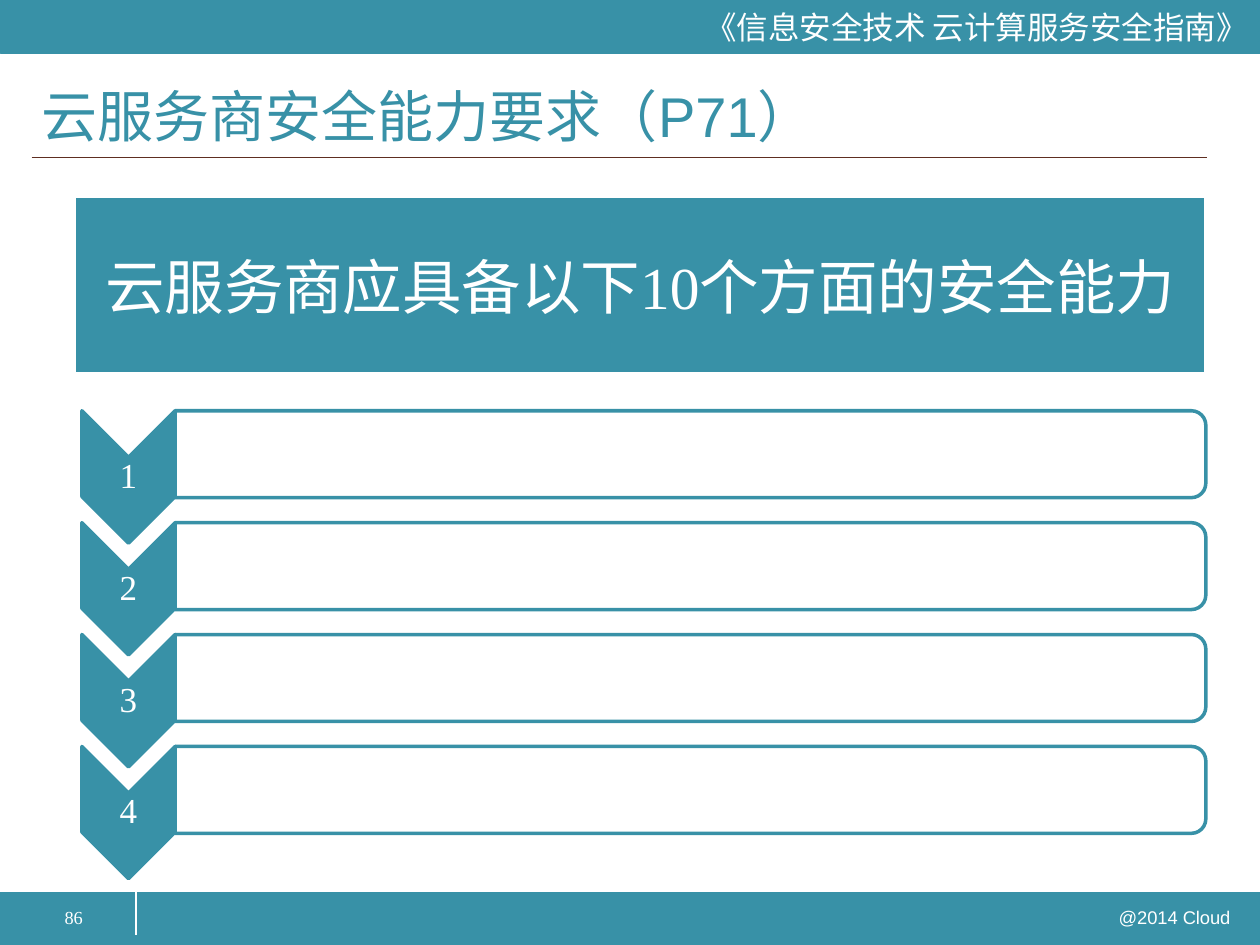
"""Build the slide on the security capabilities required of cloud providers."""
from lxml.etree import SubElement
from pptx import Presentation
from pptx.dml.color import RGBColor
from pptx.enum.shapes import MSO_CONNECTOR as Connector, MSO_SHAPE as Shape
from pptx.enum.text import MSO_ANCHOR as Anchor, PP_ALIGN as Align
from pptx.oxml.ns import qn
from pptx.util import Inches, Pt

HEADER = "《信息安全技术 云计算服务安全指南》"
TITLE = "云服务商安全能力要求（P71）"
BANNER = "云服务商应具备以下10个方面的安全能力"
STEPS = ["1", "2", "3", "4"]
PAGE = "86"
CREDIT = "@2014 Cloud"

COLORS = {"teal": "3891A7", "white": "FFFFFF", "rule": "5E2E21"}
SANS, SERIF = "Arial", "Times New Roman"
WIDTH, HEIGHT = 10, 7.5
BAND = 0.42
FOOTER_TOP = HEIGHT - BAND
STEP_LEFT, STEP_TOP, STEP_PITCH = 0.65, 3.26, 0.888
ARROW_W, ARROW_H = 0.74, 1.05
BAR_W, BAR_H = 8.18, 0.69
NUMBER_H = 0.32


def rgb(name):
    return RGBColor.from_string(COLORS[name])


def block(parent, kind, box, fill, line, weight, turned=False):
    left, top, width, height = box
    if turned:
        left, top = left + (width - height) / 2, top + (height - width) / 2
        width, height = height, width
    shape = parent.add_shape(kind, *map(Inches, (left, top, width, height)))
    shape.rotation = 90 if turned else 0
    shape.shadow.inherit = False
    shape.fill.solid()
    shape.fill.fore_color.rgb = rgb(fill)
    shape.line.color.rgb = rgb(line)
    shape.line.width = Pt(weight)
    return shape


def write(shape, text, size, font, color="white", align=Align.LEFT,
          anchor=Anchor.TOP, wrap=True, spacing=None, inset=None):
    frame = shape.text_frame
    frame.word_wrap = wrap
    frame.vertical_anchor = anchor
    if inset is not None:
        frame.margin_left = frame.margin_right = Inches(inset)
        frame.margin_top = frame.margin_bottom = Inches(inset)
    paragraph = frame.paragraphs[0]
    paragraph.alignment = align
    paragraph.line_spacing = spacing
    run = paragraph.add_run()
    run.text = text
    run.font.size = Pt(size)
    run.font.name = font
    run.font.color.rgb = rgb(color)


def label(parent, box, *args, **options):
    write(parent.add_textbox(*map(Inches, box)), *args, **options)


def rule(parent, start, end, color):
    line = parent.add_connector(Connector.STRAIGHT, *map(Inches, start + end))
    line.line.color.rgb = rgb(color)
    line.line.width = Pt(0.75)
    SubElement(line._element.spPr, qn("a:effectLst"))


def add_step(parent, number, top):
    block(parent, Shape.CHEVRON, (STEP_LEFT, top, ARROW_W, ARROW_H),
          "teal", "teal", 2, turned=True)
    label(parent, (STEP_LEFT, top + (ARROW_H - NUMBER_H) / 2, ARROW_W, NUMBER_H),
          number, 20, SERIF, align=Align.CENTER, anchor=Anchor.MIDDLE,
          spacing=0.9, inset=0.01)
    bar = block(parent, Shape.ROUND_2_SAME_RECTANGLE,
                (STEP_LEFT + ARROW_W, top, BAR_W, BAR_H),
                "white", "teal", 2, turned=True)
    tint = bar._element.spPr.find(qn("a:solidFill")).find(qn("a:srgbClr"))
    SubElement(tint, qn("a:alpha"), val="90000")


def main():
    deck = Presentation()
    deck.slide_width, deck.slide_height = Inches(WIDTH), Inches(HEIGHT)
    shapes = deck.slides.add_slide(deck.slide_layouts[6]).shapes

    block(shapes, Shape.RECTANGLE, (0, FOOTER_TOP, WIDTH, BAND), "teal", "teal", 0.25)
    header = block(shapes, Shape.RECTANGLE, (0, 0, WIDTH, BAND), "teal", "teal", 0.25)
    write(header, HEADER, 18, SANS, align=Align.RIGHT, anchor=Anchor.MIDDLE, wrap=False)
    rule(shapes, (1.08, FOOTER_TOP), (1.08, 7.42), "white")
    label(shapes, (8.78, 7.14, 1.14, 0.28), CREDIT, 10.5, SANS)
    rule(shapes, (0.25, 1.25), (9.58, 1.25), "rule")
    label(shapes, (0.23, 0.67, 9.18, 0.55), TITLE, 32, SANS, "teal",
          anchor=Anchor.MIDDLE, spacing=0.9)

    steps = shapes.add_group_shape().shapes
    for row, number in enumerate(STEPS):
        add_step(steps, number, STEP_TOP + row * STEP_PITCH)

    label(shapes, (0.17, 7.14, 0.83, 0.31), PAGE, 10.5, SERIF, align=Align.CENTER)
    banner = block(shapes, Shape.RECTANGLE, (0.59, 1.56, 8.98, 1.41), "teal", "white", 2)
    write(banner, BANNER, 34, SERIF, align=Align.CENTER, anchor=Anchor.MIDDLE)

    deck.save("out.pptx")


if __name__ == "__main__":
    main()
